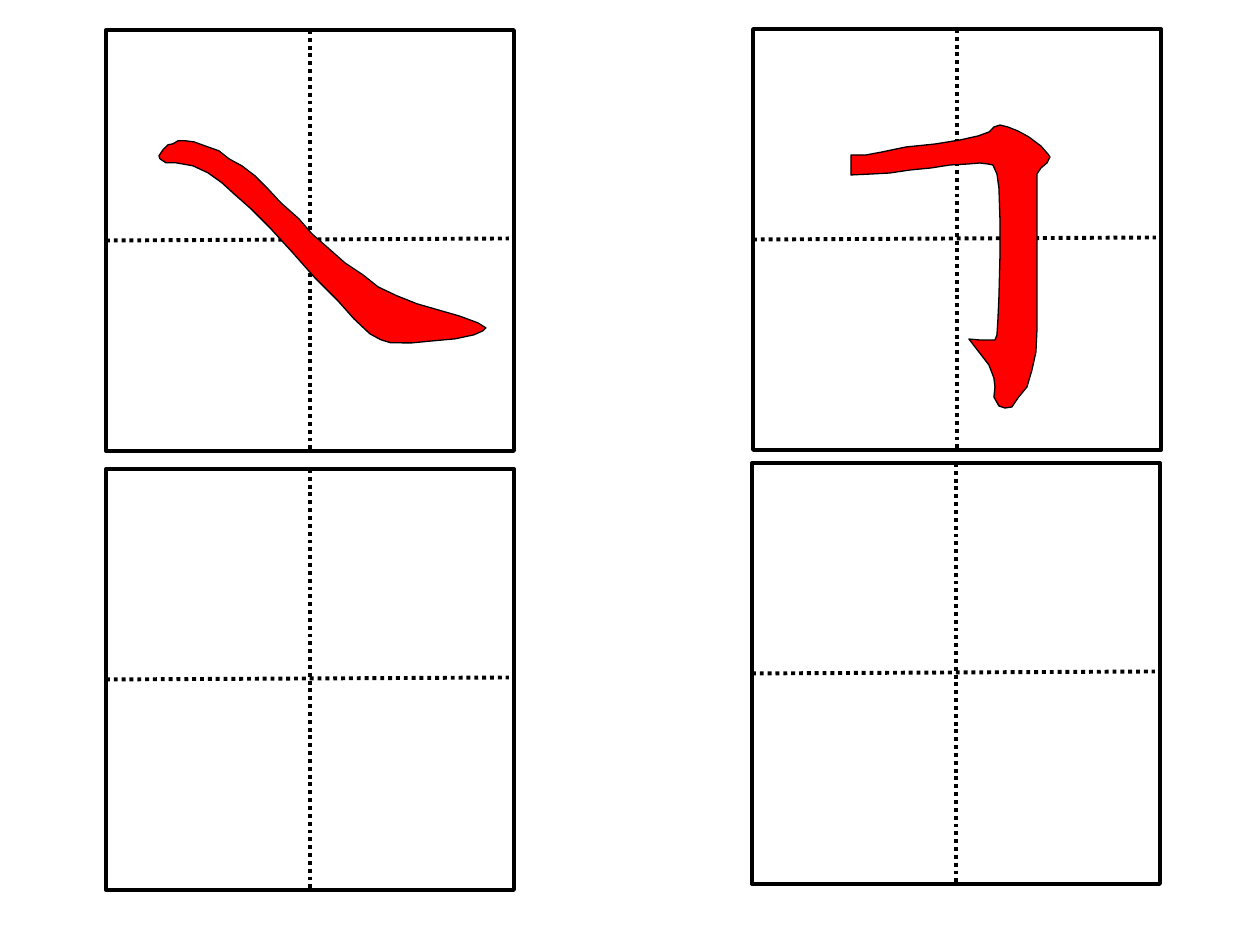
import math
import pptx
import pptx.util
import pptx.dml.color
import pptx.enum.dml
import pptx.enum.shapes
import pptx.oxml.ns
import lxml.etree

UNIT = 914400 / 126
BLACK = pptx.dml.color.RGBColor(0, 0, 0)
RED = pptx.dml.color.RGBColor(255, 0, 0)
WIDE, HIGH = 408, 421

FALL = [
    (62, 115), (67, 114), (72, 111), (80, 111), (88, 112), (99, 116),
    (113, 121), (123, 129), (136, 136), (149, 146), (162, 159), (175, 173),
    (193, 189), (206, 204), (222, 218), (239, 233), (257, 245), (272, 257),
    (291, 266), (311, 274), (332, 280), (353, 286), (372, 293), (380, 298),
    (377, 301), (368, 305), (349, 309), (327, 311), (306, 313), (285, 313),
    (275, 310), (264, 304), (248, 289), (232, 271), (209, 248), (186, 222),
    (164, 198), (145, 179), (128, 164), (116, 153), (102, 143), (87, 136),
    (70, 133), (60, 133), (54, 129), (53, 126), (57, 120),
]
HOOK = [
    (227, 134), (215, 135), (197, 136), (178, 139), (157, 141), (137, 144),
    (119, 145), (98, 146), (98, 126), (113, 126), (129, 123), (153, 118),
    (182, 115), (207, 111), (225, 107), (236, 103), (241, 98), (247, 96),
    (255, 98), (265, 102), (276, 108), (288, 117), (295, 125), (297, 128),
    (294, 134), (288, 139), (284, 145), (284, 165), (284, 302), (283, 323),
    (279, 341), (274, 358), (265, 369), (259, 378), (252, 379), (246, 377),
    (241, 368), (242, 358), (241, 349), (236, 336), (226, 323), (216, 310),
    (227, 311), (242, 311), (244, 306), (245, 290), (246, 268), (247, 229),
    (247, 189), (246, 159), (244, 145), (240, 136), (235, 135),
]


def px(num):
    return pptx.util.Emu(round(num * UNIT))


def pen(shape, width):
    shape.line.color.rgb = BLACK
    shape.line.width = pptx.util.Pt(width)


def add_dots(group, x1, y1, x2, y2):
    kind = pptx.enum.shapes.MSO_CONNECTOR.STRAIGHT
    line = group.shapes.add_connector(kind, px(x1), px(y1), px(x2), px(y2))
    pen(line, 2.25)
    line.line.dash_style = pptx.enum.dml.MSO_LINE.ROUND_DOT
    props = line._element.spPr
    lxml.etree.SubElement(props, pptx.oxml.ns.qn("a:effectLst"))
    return line


def add_cell(slide, left, top):
    group = slide.shapes.add_group_shape()
    kind = pptx.enum.shapes.MSO_SHAPE.RECTANGLE
    frame = group.shapes.add_shape(kind, px(left), px(top), px(WIDE), px(HIGH))
    frame.shadow.inherit = False
    frame.fill.background()
    pen(frame, 2.25)
    mid = top + HIGH / 2
    row = add_dots(group, left, mid, left + WIDE - 5, mid - 2)
    row.begin_connect(frame, 1)
    half = left + WIDE / 2
    post = add_dots(group, half, top, half, top + HIGH)
    post.begin_connect(frame, 0)
    post.end_connect(frame, 2)


def turn(points, angle, pivot):
    cos, sin = math.cos(math.radians(angle)), math.sin(math.radians(angle))
    mx, my = pivot
    return [
        (mx + (x - mx) * cos - (y - my) * sin,
         my + (x - mx) * sin + (y - my) * cos)
        for x, y in points
    ]


def add_stroke(slide, left, top, points, angle=0, pivot=(0, 0)):
    spots = [(px(left + x), px(top + y)) for x, y in turn(points, -angle, pivot)]
    build = slide.shapes.build_freeform(*spots[0])
    build.add_line_segments(spots[1:], close=True)
    shape = build.convert_to_shape()
    shape.rotation = angle
    shape.shadow.inherit = False
    shape.fill.solid()
    shape.fill.fore_color.rgb = RED
    pen(shape, 0)


def main():
    deck = pptx.Presentation()
    deck.slide_width, deck.slide_height = px(1260), px(945)
    slide = deck.slides.add_slide(deck.slide_layouts[6])
    cells = [(106, 30), (753, 29), (106, 469), (752, 463)]
    for left, top in cells:
        add_cell(slide, left, top)
    add_stroke(slide, *cells[0], FALL, angle=-8.6, pivot=(217, 209))
    add_stroke(slide, *cells[1], HOOK)
    deck.save("out.pptx")


if __name__ == "__main__":
    main()
